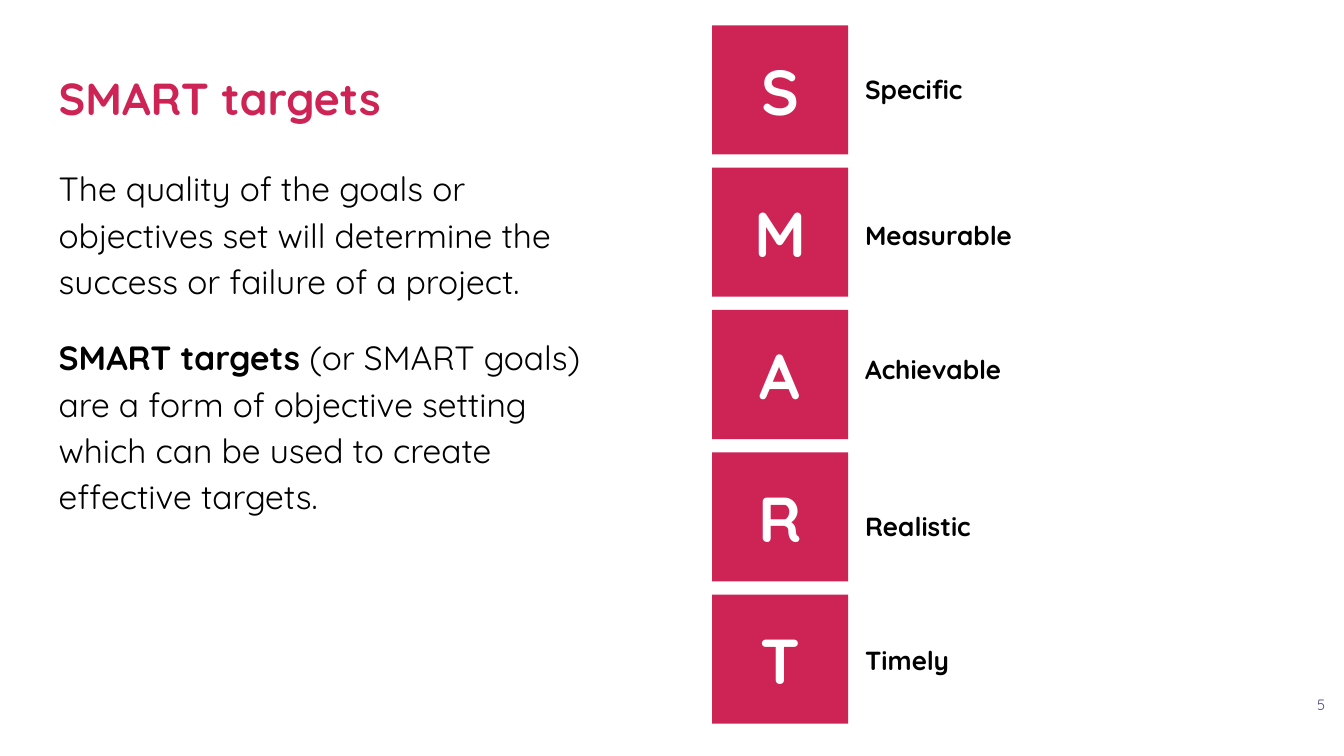
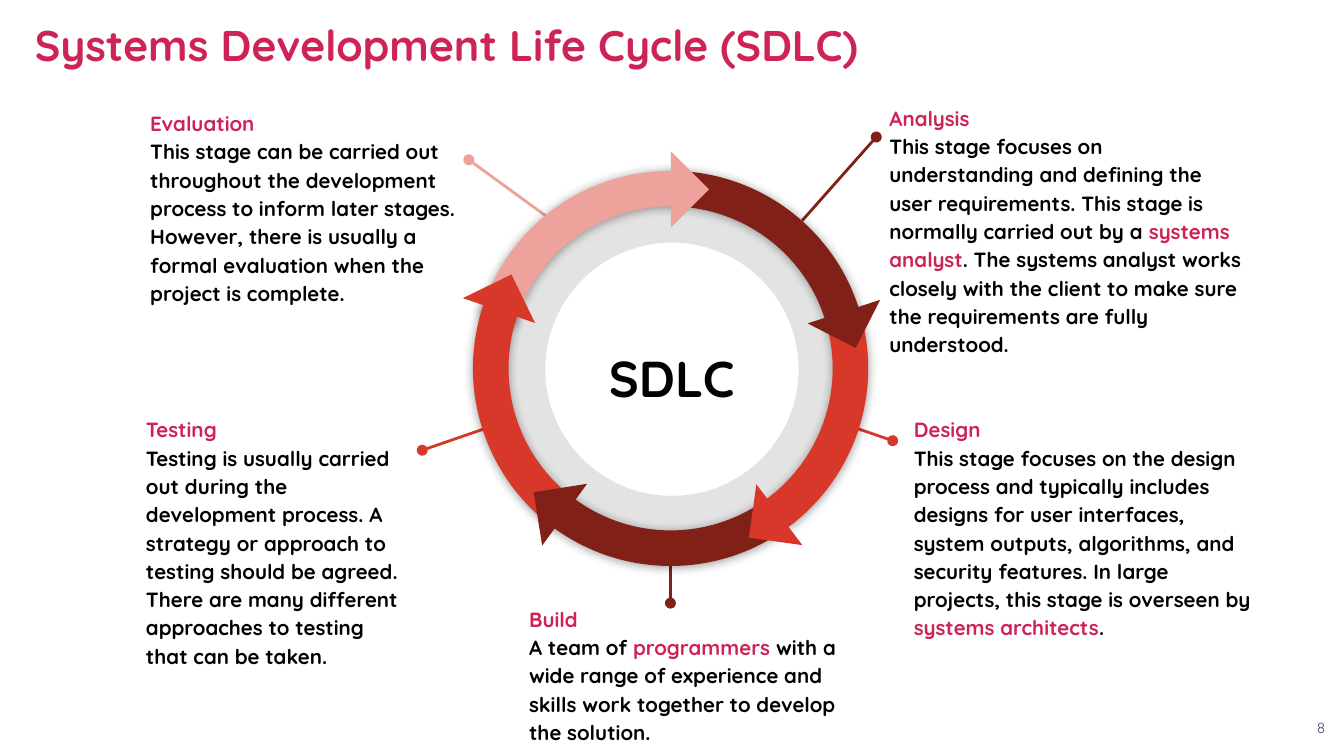
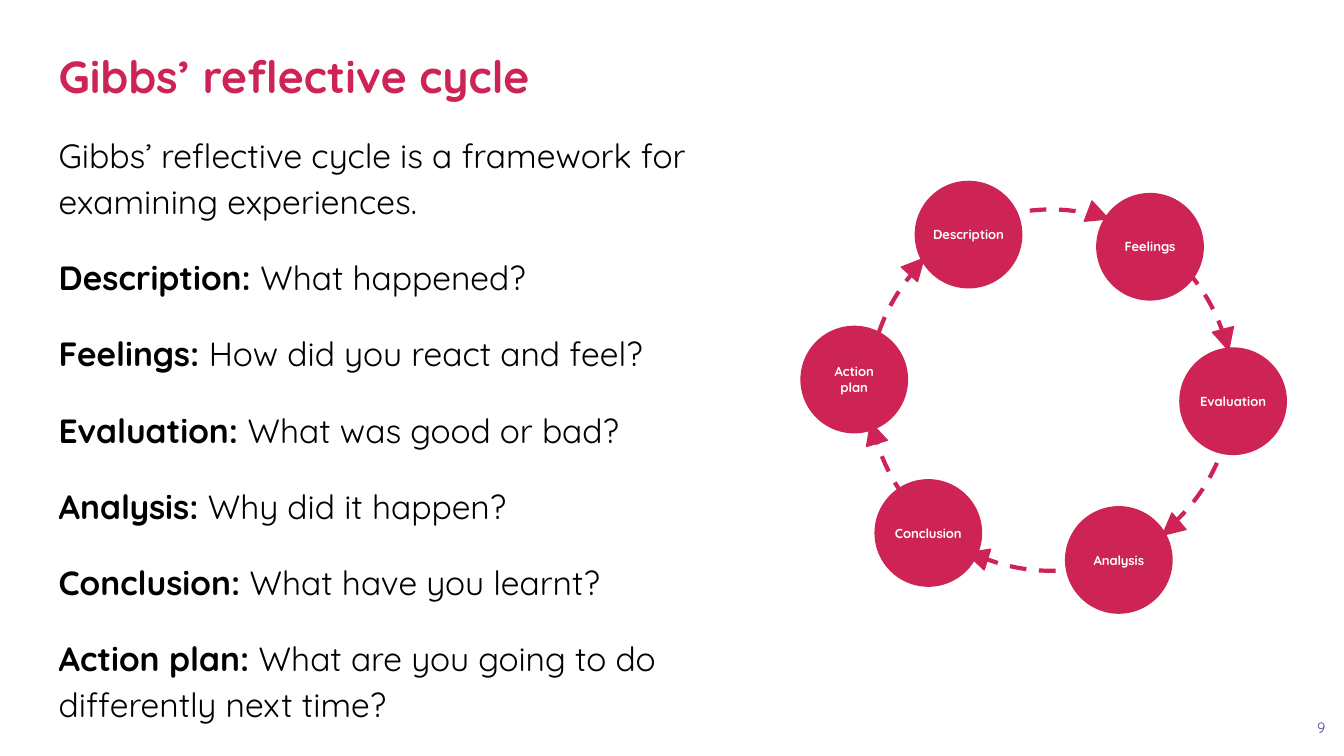
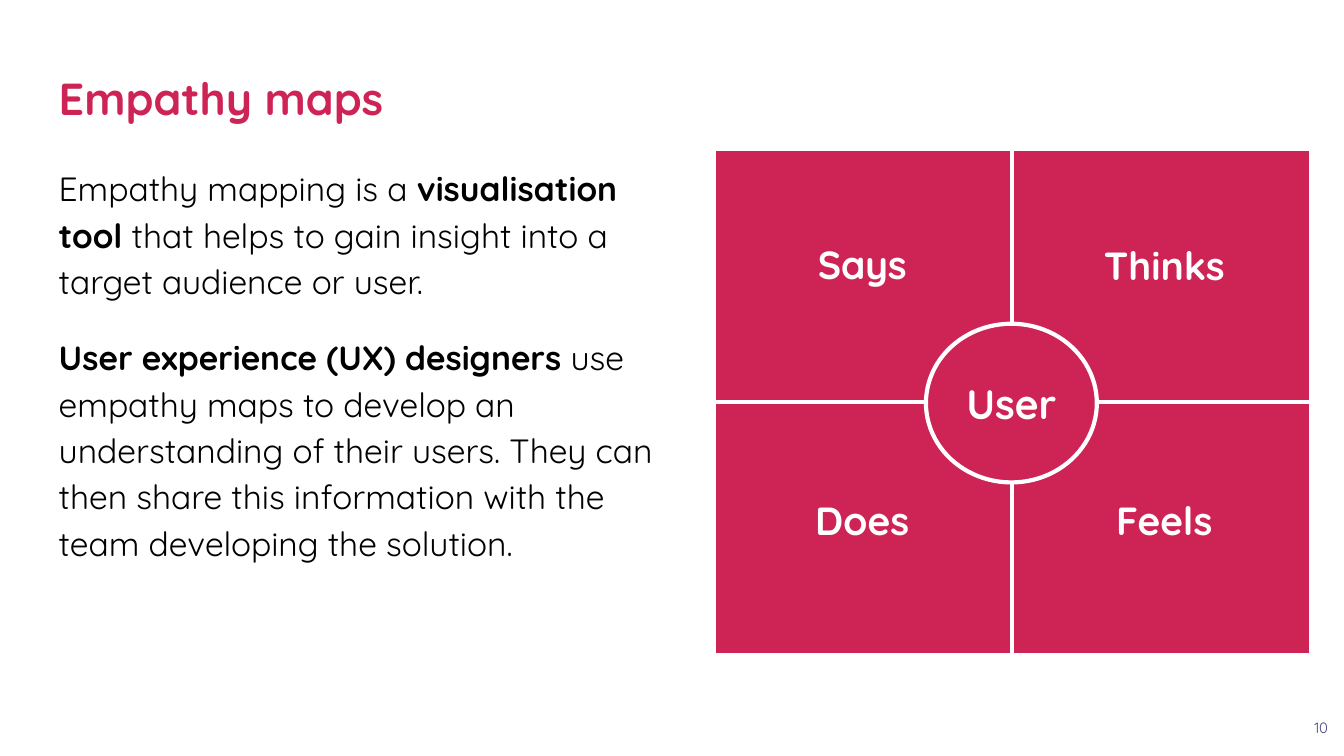
from lxml.etree import SubElement
from pptx import Presentation
from pptx.dml.color import RGBColor
from pptx.enum.dml import MSO_LINE
from pptx.enum.shapes import MSO_CONNECTOR, MSO_SHAPE
from pptx.enum.text import MSO_ANCHOR, PP_ALIGN
from pptx.oxml.ns import qn
from pptx.util import Cm, Pt

# Shared style
FONT = "Quicksand"
PINK = "CD2355"
BLACK = "000000"
WHITE = "FFFFFF"
NUMBER_BLUE = "494985"
MAROON = "802017"
RED = "D83829"
SALMON = "EDA29B"
MARGIN = 0.25


def rgb(value):
    return RGBColor.from_string(value)


# Elements
def write(shape, texts, size, color=BLACK, bold=False, align=PP_ALIGN.LEFT,
          anchor=MSO_ANCHOR.TOP, spacing=1.0, gap=0, accent=None, side=MARGIN):
    """Write paragraphs; *starred* parts are bold, or take the accent colour."""
    frame = shape.text_frame
    frame.word_wrap = True
    frame.vertical_anchor = anchor
    frame.margin_left = frame.margin_right = Cm(side)
    frame.margin_top = frame.margin_bottom = Cm(MARGIN)
    for index, text in enumerate(texts):
        paragraph = frame.add_paragraph() if index else frame.paragraphs[0]
        paragraph.alignment = align
        paragraph.line_spacing = spacing
        if index and gap:
            paragraph.space_before = Pt(gap)
        font = paragraph.font
        font.name, font.size, font.bold = FONT, Pt(size), bold
        font.color.rgb = rgb(color)
        for position, part in enumerate(text.split("*")):
            if not part:
                continue
            run = paragraph.add_run()
            run.text = part
            if position % 2 and accent:
                run.font.color.rgb = rgb(accent)
            elif position % 2:
                run.font.bold = True


def add_text(slide, left, top, width, height, texts, size, **style):
    box = slide.shapes.add_textbox(Cm(left), Cm(top), Cm(width), Cm(height))
    write(box, texts, size, **style)


def add_shape(slide, kind, left, top, width, height, fill=None, line=None,
              weight=0.75, rotation=0):
    shape = slide.shapes.add_shape(kind, Cm(left), Cm(top), Cm(width), Cm(height))
    shape.rotation = rotation
    if fill:
        shape.fill.solid()
        shape.fill.fore_color.rgb = rgb(fill)
    else:
        shape.fill.background()
    if line:
        shape.line.color.rgb = rgb(line)
        shape.line.width = Pt(weight)
    else:
        shape.line.fill.background()
    shape.shadow.inherit = False
    return shape


def write_centred(shape, text, size, side=MARGIN):
    write(shape, [text], size, color=WHITE, bold=True, align=PP_ALIGN.CENTER,
          anchor=MSO_ANCHOR.MIDDLE, side=side)


def set_alpha(color_element, percent):
    SubElement(color_element, qn("a:alpha"), val=str(percent * 1000))


def add_soft_shadow(shape):
    effects = shape._element.spPr.find(qn("a:effectLst"))
    shadow = SubElement(effects, qn("a:outerShdw"), blurRad=str(Pt(5.6)),
                        dist=str(Pt(0.8)), dir="5400000", rotWithShape="0")
    set_alpha(SubElement(shadow, qn("a:srgbClr"), val=BLACK), 40)


def add_arc(slide, start, end, color):
    """Ring section between two angles, clockwise from three o'clock."""
    arc = add_shape(slide, MSO_SHAPE.BLOCK_ARC, 8.94, 3.23, 7.47, 7.47, color)
    arc.adjustments[0] = start * 0.6
    arc.adjustments[1] = end * 0.6
    arc.adjustments[2] = 0.09
    add_soft_shadow(arc)


def add_pointer(slide, start_x, start_y, end_x, end_y, color):
    pointer = slide.shapes.add_connector(
        MSO_CONNECTOR.STRAIGHT, Cm(start_x), Cm(start_y), Cm(end_x), Cm(end_y))
    pointer.line.color.rgb = rgb(color)
    pointer.line.width = Pt(1.5)
    SubElement(pointer.line._get_or_add_ln(), qn("a:headEnd"), type="oval")
    SubElement(pointer._element.spPr, qn("a:effectLst"))


def set_borders(cell, color, weight):
    properties = cell._tc.get_or_add_tcPr()
    for index, side in enumerate(("lnL", "lnR", "lnT", "lnB")):
        border = properties.makeelement(qn(f"a:{side}"), {"w": str(Pt(weight))})
        fill = SubElement(border, qn("a:solidFill"))
        SubElement(fill, qn("a:srgbClr"), val=color)
        properties.insert(index, border)


def add_page(presentation, title, number, left=0.86, top=0.86, size=24,
             number_top=13.41):
    slide = presentation.slides.add_slide(presentation.slide_layouts[6])
    add_text(slide, left, top, 23.67, 1.98, [title], size, color=PINK, bold=True,
             anchor=MSO_ANCHOR.MIDDLE)
    add_text(slide, 24.54, number_top, 0.86, 0.86, [str(number)], 8,
             color=NUMBER_BLUE, align=PP_ALIGN.CENTER)
    return slide


def add_body(slide, top, width, texts):
    add_text(slide, 0.86, top, width, 10.59, texts, 18, spacing=1.15, gap=16)


# Slides
def build_smart_targets(presentation):
    slide = add_page(presentation, "SMART targets", 5, number_top=12.98)
    add_body(slide, 2.82, 11.15, [
        "The quality of the goals or objectives set will determine the success "
        "or failure of a project.",
        "*SMART targets* (or SMART goals) are a form of objective setting which "
        "can be used to create effective targets.",
    ])
    targets = [("Specific", 1.14), ("Measurable", 3.89), ("Achievable", 6.43),
               ("Realistic", 9.4), ("Timely", 11.94)]
    for index, (target, label_top) in enumerate(targets):
        tile = add_shape(slide, MSO_SHAPE.RECTANGLE, 13.46, 0.48 + 2.69 * index,
                         2.57, 2.44, PINK)
        write_centred(tile, target[0], 34)
        add_text(slide, 16.1, label_top, 3.61, 1.07, [target], 14, bold=True)


def build_life_cycle(presentation):
    slide = add_page(presentation, "Systems Development Life Cycle (SDLC)", 8,
                     left=0.41, top=-0.15, size=23)
    # Inner ring
    ring = add_shape(slide, MSO_SHAPE.DONUT, 9.17, 3.45, 7.06, 7.06, BLACK)
    ring.adjustments[0] = 0.161
    set_alpha(ring._element.spPr.find(qn("a:solidFill"))[0], 11)

    # Pointers, arcs and arrowheads
    pointers = [(16.56, 2.59, 15.16, 4.17, MAROON), (8.86, 3.02, 10.85, 4.47, SALMON),
                (16.87, 8.33, 15.62, 7.9, RED), (7.98, 8.51, 9.75, 7.9, RED),
                (12.67, 11.4, 12.67, 10.06, MAROON)]
    for pointer in pointers:
        add_pointer(slide, *pointer)
    arcs = [(270, 346.6, MAROON), (346.3, 53.7, RED), (195.8, 271.1, SALMON),
            (126.4, 200.1, RED), (56.5, 127.7, MAROON)]
    for arc in arcs:
        add_arc(slide, *arc)
    arrowheads = [(15.44, 5.38, 297, MAROON), (8.92, 5.36, 154, RED),
                  (14.22, 9.22, 7.9, RED), (10.16, 9.22, 81, MAROON),
                  (12.17, 3.07, 225, SALMON)]
    for left, top, rotation, color in arrowheads:
        add_shape(slide, MSO_SHAPE.RIGHT_TRIANGLE, left, top, 1.02, 1.02, color,
                  rotation=rotation)
    add_text(slide, 10.69, 5.92, 4.01, 2.24, ["SDLC"], 27, color="020202", bold=True,
             align=PP_ALIGN.CENTER, anchor=MSO_ANCHOR.MIDDLE, spacing=1.15)

    # Stages
    stages = [
        (16.56, 1.68, 7.32, "Analysis",
         "This stage focuses on understanding and defining the user requirements. "
         "This stage is normally carried out by a *systems analyst*. The systems "
         "analyst works closely with the client to make sure the requirements are "
         "fully understood."),
        (17.02, 7.57, 7.06, "Design",
         "This stage focuses on the design process and typically includes designs "
         "for user interfaces, system outputs, algorithms, and security features. "
         "In large projects, this stage is overseen by *systems architects*."),
        (9.75, 11.15, 6.48, "Build",
         "A team of *programmers *with a wide range of experience and skills work "
         "together to develop the solution."),
        (2.51, 7.57, 5.46, "Testing",
         "Testing is usually carried out during the development process. A strategy "
         "or approach to testing should be agreed. There are many different "
         "approaches to testing that can be taken."),
        (2.59, 1.78, 6.73, "Evaluation",
         "This stage can be carried out throughout the development process to inform "
         "later stages. However, there is usually a formal evaluation when the "
         "project is complete."),
    ]
    for left, top, width, stage, description in stages:
        add_text(slide, left, top, width, 1.85, [f"*{stage}*", description], 11,
                 bold=True, spacing=1.15, accent=PINK)


def build_reflective_cycle(presentation):
    slide = add_page(presentation, "Gibbs’ reflective cycle", 9, top=0.43)
    add_body(slide, 2.18, 13.74, [
        "Gibbs’ reflective cycle is a framework for examining experiences.",
        "*Description: *What happened?",
        "*Feelings: *How did you react and feel?",
        "*Evaluation: *What was good or bad?",
        "*Analysis: *Why did it happen?",
        "*Conclusion: *What have you learnt?",
        "*Action plan: *What are you going to do differently next time?",
    ])
    # Dashed ring with stages and arrowheads
    ring = add_shape(slide, MSO_SHAPE.OVAL, 16.43, 3.96, 6.86, 6.83, line=PINK,
                     weight=2.25)
    ring.line.dash_style = MSO_LINE.DASH
    stages = [("Feelings", 20.73, 3.66), ("Evaluation", 22.3, 6.58),
              ("Analysis", 20.14, 9.58), ("Conclusion", 16.54, 9.07),
              ("Action plan", 15.14, 6.17), ("Description", 17.3, 3.43)]
    for stage, left, top in stages:
        circle = add_shape(slide, MSO_SHAPE.OVAL, left, top, 2.01, 2.01, PINK, PINK)
        write_centred(circle, stage, 7, side=MARGIN if " " in stage else 0)
    arrowheads = [(17.12, 4.83, 42.1), (20.55, 3.86, 111), (22.96, 6.22, 164.8),
                  (21.92, 9.78, 229.6), (18.26, 10.31, 287.3), (16.31, 7.98, 343.4)]
    for left, top, rotation in arrowheads:
        add_shape(slide, MSO_SHAPE.ISOSCELES_TRIANGLE, left, top, 0.41, 0.41,
                  PINK, PINK, rotation=rotation)


def build_empathy_maps(presentation):
    slide = add_page(presentation, "Empathy maps", 10)
    add_body(slide, 2.82, 12.29, [
        "Empathy mapping is a *visualisation tool* that helps to gain insight into "
        "a target audience or user.",
        "*User experience (UX) designers* use empathy maps to develop an "
        "understanding of their users. They can then share this information with "
        "the team developing the solution.",
    ])
    # Quadrants
    table = slide.shapes.add_table(2, 2, Cm(13.49), Cm(2.82), Cm(11.28), Cm(9.56)).table
    table.first_row = table.horz_banding = False
    for cell in table.iter_cells():
        cell.fill.solid()
        cell.fill.fore_color.rgb = rgb(PINK)
        set_borders(cell, WHITE, 2.25)
    user = add_shape(slide, MSO_SHAPE.OVAL, 17.5, 6.12, 3.23, 3, PINK, WHITE, 2.25)
    write_centred(user, "User", 22)
    quadrants = [("Says", 14.53, 4.29), ("Does", 14.53, 9.14),
                 ("Thinks", 20.24, 4.32), ("Feels", 20.24, 9.14)]
    for label, left, top in quadrants:
        add_text(slide, left, top, 3.53, 1.45, [label], 21, color=WHITE, bold=True,
                 align=PP_ALIGN.CENTER)


def main():
    presentation = Presentation()
    presentation.slide_width = Cm(25.4)
    presentation.slide_height = Cm(14.29)
    build_smart_targets(presentation)
    build_life_cycle(presentation)
    build_reflective_cycle(presentation)
    build_empathy_maps(presentation)
    presentation.save("out.pptx")


if __name__ == "__main__":
    main()
